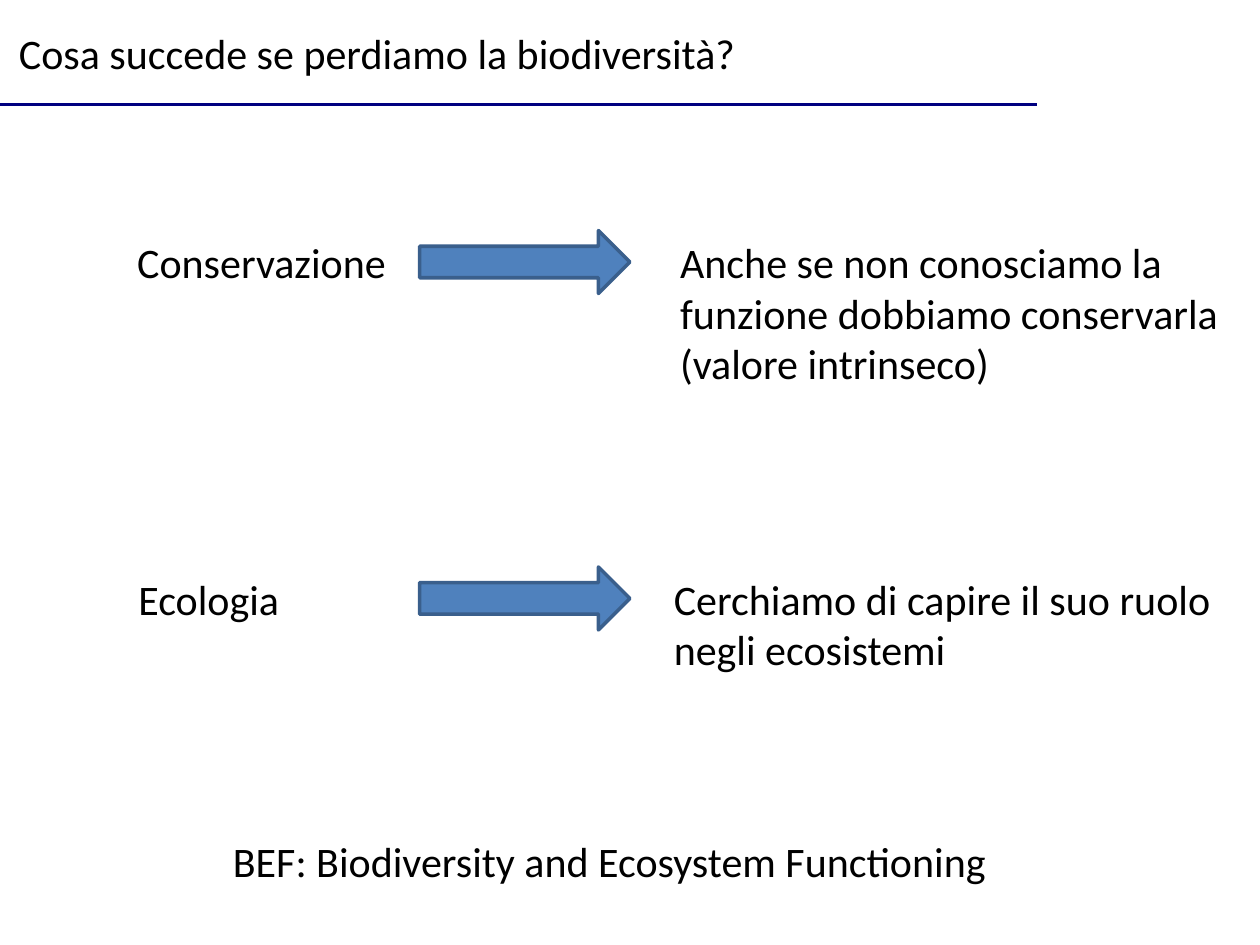
from pptx import Presentation
from pptx.dml.color import RGBColor
from pptx.enum import shapes, text
from pptx.oxml.ns import qn
from pptx.util import Inches, Pt

NAVY = RGBColor(0x00, 0x00, 0x80)
BLUE = RGBColor(0x4F, 0x81, 0xBD)
EDGE = RGBColor(0x3A, 0x5F, 0x8C)
BLACK = RGBColor(0, 0, 0)


def write(box, words, left, top, width, height, wrap=True):
    box.left, box.top = Inches(left), Inches(top)
    box.width, box.height = Inches(width), Inches(height)
    frame = box.text_frame
    frame.text = words
    frame.word_wrap = wrap
    frame.auto_size = text.MSO_AUTO_SIZE.SHAPE_TO_FIT_TEXT
    frame.vertical_anchor = text.MSO_ANCHOR.TOP
    par = frame.paragraphs[0]
    par.alignment = text.PP_ALIGN.LEFT
    font = par.runs[0].font
    font.name, font.size = "Calibri", Pt(24)
    font.color.rgb = BLACK


def add_text(*args, **opts):
    write(slide.shapes.add_textbox(0, 0, 0, 0), *args, **opts)


deck = Presentation()
deck.slide_width, deck.slide_height = Inches(10), Inches(7.5)
slide = deck.slides.add_slide(deck.slide_layouts[5])

# Title and the rule below it
write(slide.shapes.title, "Cosa succede se perdiamo la biodiversità?",
      0.05, 0.17, 6.09, 0.5, wrap=False)
rule = slide.shapes.add_connector(
    shapes.MSO_CONNECTOR.STRAIGHT, 0, Inches(0.83), Inches(8.23), Inches(0.83))
rule.line.color.rgb = NAVY
rule.line.width = Pt(2)
props = rule._element.spPr
props.append(props.makeelement(qn("a:effectLst"), {}))

# Each field, an arrow, and its view
rows = [
    (1.83, "Conservazione", 0.99, 2.2, 5.3, 1.31,
     "Anche se non conosciamo la funzione dobbiamo conservarla (valore intrinseco)"),
    (4.5, "Ecologia", 1, 1.33, 5.25, 0.91,
     "Cerchiamo di capire il suo ruolo negli ecosistemi"),
]
for top, field, left, width, start, height, view in rows:
    add_text(field, left, top, width, 0.5, wrap=False)
    arrow = slide.shapes.add_shape(
        shapes.MSO_SHAPE.RIGHT_ARROW,
        Inches(3.33), Inches(top), Inches(1.67), Inches(0.5))
    arrow.shadow.inherit = False
    arrow.fill.solid()
    arrow.fill.fore_color.rgb = BLUE
    arrow.line.color.rgb = EDGE
    arrow.line.width = Pt(2)
    add_text(view, start, top, 4.7, height)

# Closing line
add_text("BEF: Biodiversity and Ecosystem Functioning", 1.75, 6.58, 7.28, 0.5)

deck.save("out.pptx")
